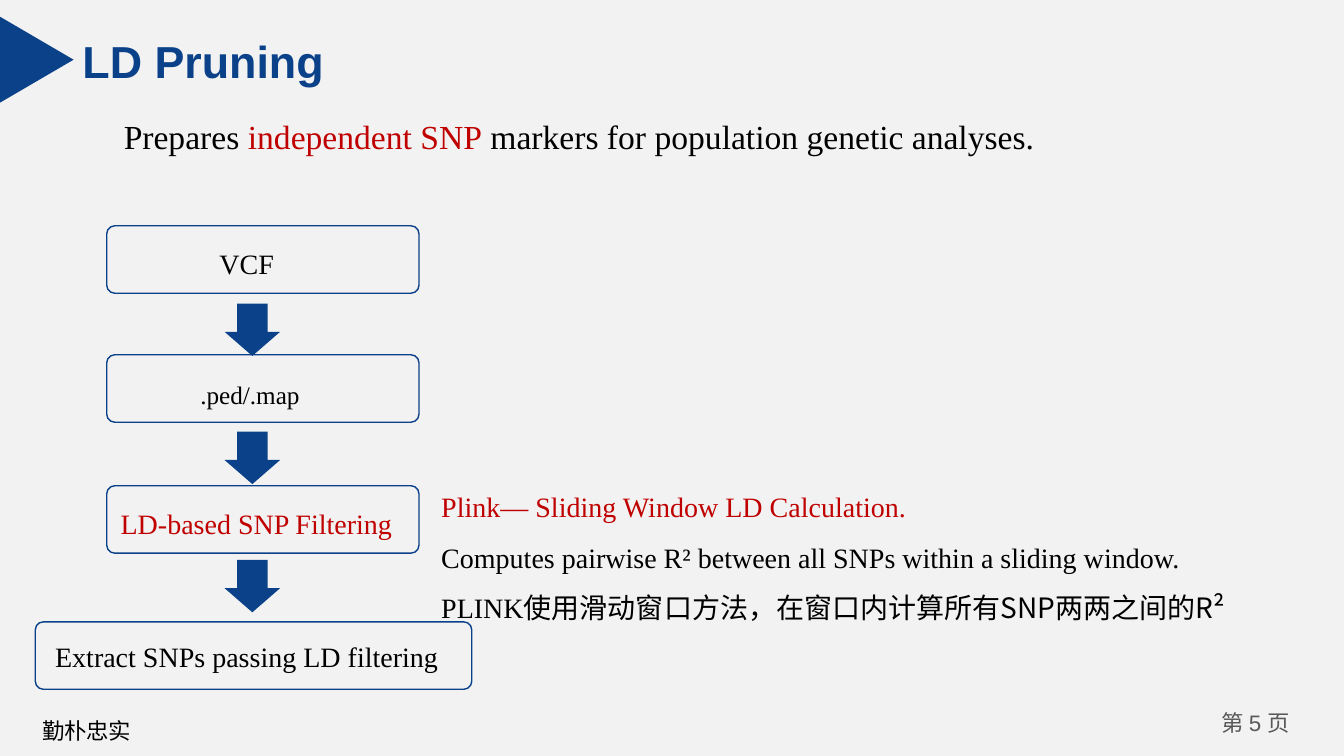
"""Builds the LD Pruning slide: a four-step flow with notes on the filtering step."""
from lxml import etree
from pptx import Presentation
from pptx.dml.color import RGBColor
from pptx.enum.shapes import MSO_SHAPE
from pptx.enum.text import PP_ALIGN
from pptx.oxml.ns import qn
from pptx.util import Cm, Pt

TRIANGLE = MSO_SHAPE.ISOSCELES_TRIANGLE
ROUNDED = MSO_SHAPE.ROUNDED_RECTANGLE
DOWN_ARROW = MSO_SHAPE.DOWN_ARROW
LEFT, CENTER = PP_ALIGN.LEFT, PP_ALIGN.CENTER

COLORS = {"navy": "0B4189", "red": "C00000", "black": "000000",
          "gray": "595959", "background": "F2F2F2"}
SERIF, SANS, CJK = "Times New Roman", "Arial", "Noto Sans CJK SC"

TITLE = [[("LD Pruning", SANS, "navy")]]
PURPOSE = [[("Prepares ", SERIF, "black"), ("independent SNP", SERIF, "red"),
            (" markers for population genetic analyses.", SERIF, "black")]]
NOTES = [
    [("Plink— Sliding Window LD Calculation.", SERIF, "red")],
    [("Computes pairwise R² between all SNPs within a sliding window.", SERIF, "black")],
    [("PLINK", SERIF, "black"),
     ("使用滑动窗口方法，在窗口内计算所有SNP两两之间的R²", CJK, "black")],
]
MOTTO = [[("勤朴忠实", CJK, "black")]]
PAGE = [[("第 ", CJK, "gray"), ("5 ", SANS, "gray"), ("页", CJK, "gray")]]

# label, colour, size, box (left, top, width), label (left, top, width)
STEPS = [
    ("VCF", "black", 20, (2.69, 5.69, 7.87), (5.28, 5.84, 1.93)),
    (".ped/.map", "black", 18, (2.69, 8.94, 7.87), (4.8, 9.19, 3.18)),
    ("LD-based SNP Filtering", "red", 20, (2.69, 12.24, 7.87), (2.79, 12.37, 8.64)),
    ("Extract SNPs passing LD filtering", "black", 20,
     (0.89, 15.67, 11), (1.14, 15.72, 11)),
]
STEP_HEIGHT, LABEL_HEIGHT = 1.7, 1.37
ARROW_LEFT, ARROW_TOP, ARROW_PITCH = 5.66, 7.65, 3.23
ARROW_WIDTH, ARROW_HEIGHT = 1.4, 1.32


def rgb(name):
    return RGBColor.from_string(COLORS[name])


def add_text(slide, paragraphs, place, size=20, bold=False, spacing=1.0,
             align=LEFT, wrap=True, inset=(0.25, 0.13)):
    frame = slide.shapes.add_textbox(*map(Cm, place)).text_frame
    frame.word_wrap = wrap
    frame.margin_left = frame.margin_right = Cm(inset[0])
    frame.margin_top = frame.margin_bottom = Cm(inset[1])
    for index, pieces in enumerate(paragraphs):
        paragraph = frame.add_paragraph() if index else frame.paragraphs[0]
        paragraph.line_spacing = spacing
        paragraph.alignment = align
        for words, typeface, color in pieces:
            run = paragraph.add_run()
            run.text = words
            run.font.size = Pt(size)
            run.font.bold = bold
            run.font.color.rgb = rgb(color)
            run.font.name = typeface
            etree.SubElement(run.font._element, qn("a:ea"), typeface=typeface)


def add_block(slide, preset, place, fill, outline=None, adjustments=()):
    block = slide.shapes.add_shape(preset, *map(Cm, place))
    block.shadow.inherit = False
    block.fill.solid()
    block.fill.fore_color.rgb = rgb(fill)
    if outline:
        block.line.color.rgb = rgb(outline)
        block.line.width = Pt(1)
    else:
        block.line.fill.background()
    for index, value in enumerate(adjustments):
        block.adjustments[index] = value
    return block


def main():
    deck = Presentation()
    deck.slide_width, deck.slide_height = Cm(33.87), Cm(19.05)
    slide = deck.slides.add_slide(deck.slide_layouts[6])
    slide.background.fill.solid()
    slide.background.fill.fore_color.rgb = rgb("background")

    add_text(slide, PAGE, (30.12, 17.73, 3.05, 1.02), size=16, align=CENTER)
    add_text(slide, MOTTO, (0.81, 17.73, 7.95, 1.09), size=16, spacing=1.3)
    add_block(slide, TRIANGLE, (-0.15, 0.58, 2.16, 1.85), "navy").rotation = 90
    add_text(slide, TITLE, (1.75, 0.66, 8.23, 1.93), size=32, bold=True,
             wrap=False, inset=(0.33, 0.18))
    add_text(slide, PURPOSE, (2.87, 2.49, 29.9, 1.93), size=24, spacing=1.3)
    add_text(slide, NOTES, (10.87, 11.79, 22.25, 5.21), spacing=1.5)

    for index, (label, color, size, box, caption) in enumerate(STEPS):
        add_block(slide, ROUNDED, (*box, STEP_HEIGHT), "background", "navy", (0.12,))
        add_text(slide, [[(label, SERIF, color)]], (*caption, LABEL_HEIGHT),
                 size=size, spacing=1.3, wrap=index > 0)
    for index in range(len(STEPS) - 1):
        top = ARROW_TOP + index * ARROW_PITCH
        add_block(slide, DOWN_ARROW, (ARROW_LEFT, top, ARROW_WIDTH, ARROW_HEIGHT),
                  "navy", adjustments=(0.55, 0.46))

    deck.save("out.pptx")


if __name__ == "__main__":
    main()
